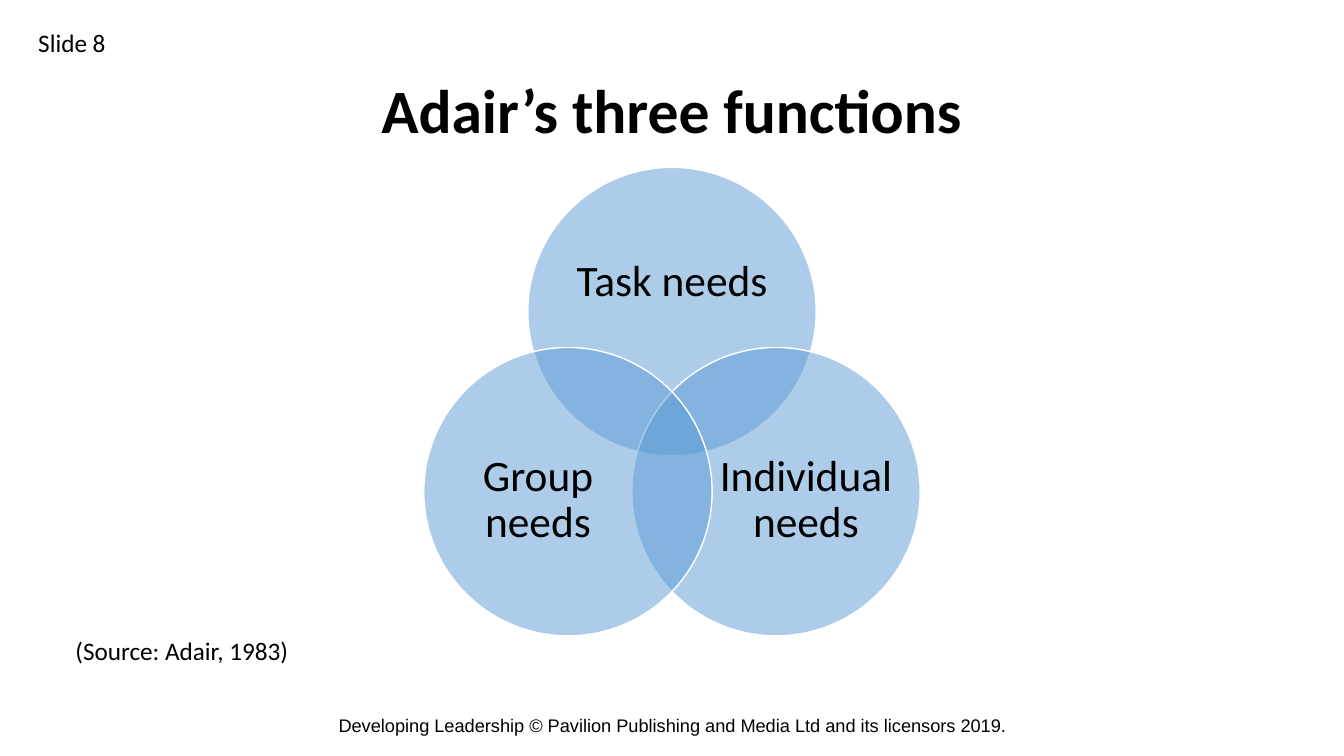
"""Build the slide on Adair's three functions as a three-circle Venn diagram."""
import math
from dataclasses import dataclass

import lxml.etree
import pptx
import pptx.dml.color
import pptx.enum.shapes
import pptx.enum.text
import pptx.oxml.ns
import pptx.util

Pt = pptx.util.Pt
Align = pptx.enum.text.PP_ALIGN
Anchor = pptx.enum.text.MSO_ANCHOR

SLIDE_WIDTH, SLIDE_HEIGHT = 960, 540
VENN_X, VENN_Y = SLIDE_WIDTH / 2, 308.3
VENN_RADIUS = 85.8
CIRCLE_SIZE = 206
CIRCLE_COLOUR, OUTLINE_COLOUR, TEXT_COLOUR = "5B9BD5", "FFFFFF", "000000"
CIRCLE_ALPHA = "50000"


@dataclass
class Label:
    """A piece of text with its box and format."""
    text: str
    left: float
    top: float
    width: float
    height: float
    size: float
    font: str = "Calibri"
    bold: bool = False
    align: Align = Align.CENTER
    anchor: Anchor = Anchor.MIDDLE
    line_spacing: float = 1.0
    inset: tuple[float, float] = (7.2, 3.6)


@dataclass
class Need:
    """A circle at an angle on the Venn ring, with its label box."""
    text: str
    angle: float
    label_x: float
    label_y: float
    label_width: float
    label_height: float


CAPTIONS = [
    Label("Developing Leadership © Pavilion Publishing and Media Ltd and its licensors 2019.",
          0, 503.3, SLIDE_WIDTH, 28.8, 13, font="Arial"),
    Label("Adair’s three functions", 66, 28.8, 828, 104.4, 44, bold=True, line_spacing=0.9),
    Label("(Source: Adair, 1983)", 46.8, 450, 226.8, 51, 18,
          align=Align.LEFT, anchor=Anchor.TOP),
    Label("Slide 8", 20.2, 15.8, 182, 28.8, 18, align=Align.LEFT, anchor=Anchor.TOP),
]

NEEDS = [
    Need("Task needs", -90, VENN_X, 201.6, 150.5, 92.2),
    Need("Individual needs", 30, VENN_X + 95.7, 357.5, 124, 113),
    Need("Group needs", 150, VENN_X - 95.7, 357.5, 124, 113),
]


def colour(value: str) -> pptx.dml.color.RGBColor:
    """Turn a hex string into a colour."""
    return pptx.dml.color.RGBColor.from_string(value)


def apply(target: object, values: dict[str, object]) -> None:
    """Set every attribute in the dict on the target."""
    for name, value in values.items():
        setattr(target, name, value)


def draw_label(slide: pptx.slide.Slide, label: Label) -> None:
    """Draw one text box."""
    box = slide.shapes.add_textbox(Pt(label.left), Pt(label.top), Pt(label.width), Pt(label.height))
    side, edge = (Pt(inset) for inset in label.inset)
    apply(box.text_frame, {
        "word_wrap": True, "vertical_anchor": label.anchor,
        "margin_left": side, "margin_right": side,
        "margin_top": edge, "margin_bottom": edge,
    })
    paragraph = box.text_frame.paragraphs[0]
    apply(paragraph, {"alignment": label.align, "line_spacing": label.line_spacing})
    run = paragraph.add_run()
    run.text = label.text
    apply(run.font, {"name": label.font, "size": Pt(label.size), "bold": label.bold})
    run.font.color.rgb = colour(TEXT_COLOUR)


def draw_need(slide: pptx.slide.Slide, need: Need) -> None:
    """Draw one translucent circle and its label."""
    angle = math.radians(need.angle)
    left = VENN_X + VENN_RADIUS * math.cos(angle) - CIRCLE_SIZE / 2
    top = VENN_Y + VENN_RADIUS * math.sin(angle) - CIRCLE_SIZE / 2
    circle = slide.shapes.add_shape(pptx.enum.shapes.MSO_SHAPE.OVAL,
                                    Pt(left), Pt(top), Pt(CIRCLE_SIZE), Pt(CIRCLE_SIZE))
    circle.shadow.inherit = False
    circle.fill.solid()
    circle.fill.fore_color.rgb = colour(CIRCLE_COLOUR)
    qn = pptx.oxml.ns.qn
    fill_colour = circle.element.spPr.find(qn("a:solidFill")).find(qn("a:srgbClr"))
    lxml.etree.SubElement(fill_colour, qn("a:alpha"), val=CIRCLE_ALPHA)
    circle.line.color.rgb = colour(OUTLINE_COLOUR)
    circle.line.width = Pt(1)
    draw_label(slide, Label(need.text, need.label_x - need.label_width / 2,
                            need.label_y - need.label_height / 2,
                            need.label_width, need.label_height, 31,
                            line_spacing=0.9, inset=(0, 0)))


def main() -> None:
    """Build and save the presentation."""
    presentation = pptx.Presentation()
    apply(presentation, {"slide_width": Pt(SLIDE_WIDTH), "slide_height": Pt(SLIDE_HEIGHT)})
    slide = presentation.slides.add_slide(presentation.slide_layouts[6])
    for need in NEEDS:
        draw_need(slide, need)
    for caption in CAPTIONS:
        draw_label(slide, caption)
    presentation.save("out.pptx")


if __name__ == "__main__":
    main()
